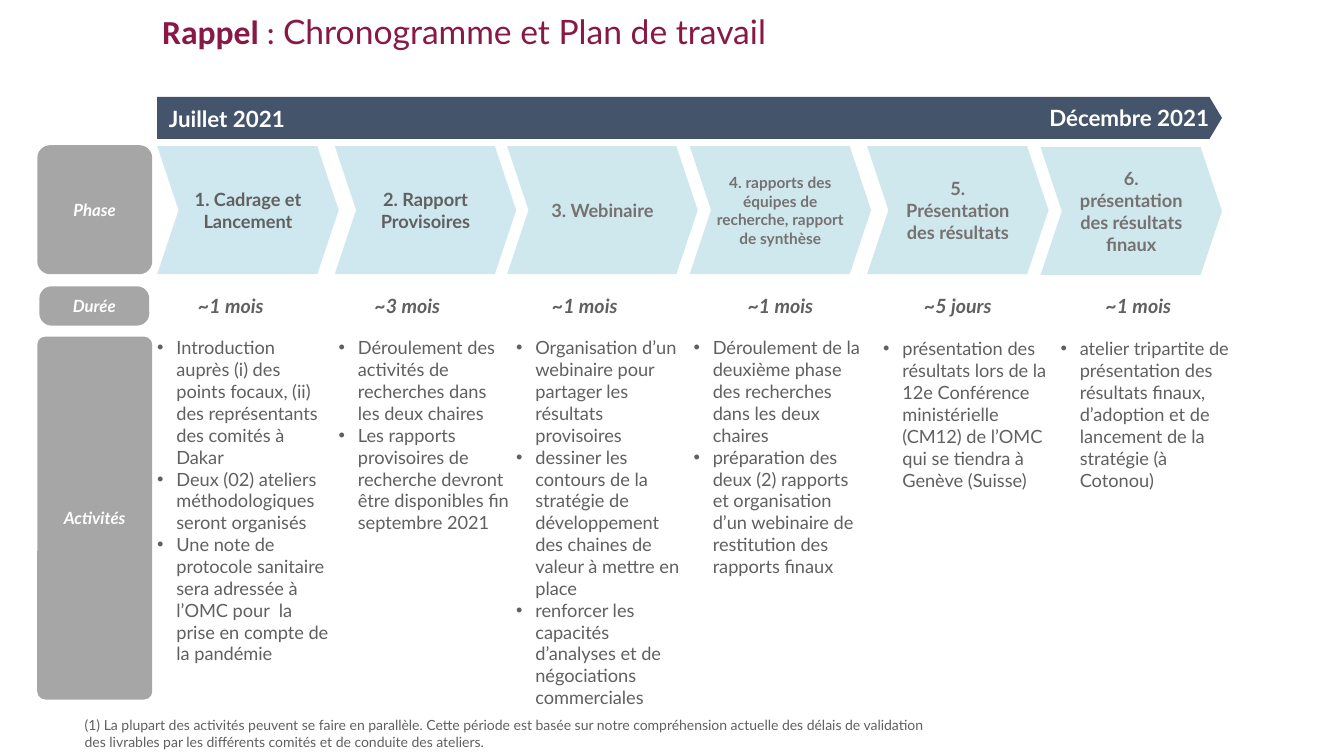
from lxml import etree
from pptx import Presentation
from pptx.dml.color import RGBColor
from pptx.enum import shapes, text
from pptx.oxml.ns import qn
from pptx.util import Inches, Pt

PLUM, NAVY, TEAL, PALE_TEAL = "881946", "44546A", "118AAA", "CFE8EE"
GREY, DARK, WARM, WHITE = "A6A6A6", "606060", "767171", "FFFFFF"
SHAPE = shapes.MSO_SHAPE
CENTER = text.PP_ALIGN.CENTER
TOP, MIDDLE, BOTTOM = (text.MSO_ANCHOR.TOP, text.MSO_ANCHOR.MIDDLE,
                       text.MSO_ANCHOR.BOTTOM)
DEFAULT_INSETS = (0.1, 0.05, 0.1, 0.05)
NO_INSETS = (0, 0, 0, 0)


def color(value):
    return RGBColor.from_string(value)


class SlideBuilder:
    def __init__(self, slide, font="Lato"):
        self.slide = slide
        self.font = font

    def style_run(self, run, size, ink, bold=False, italic=False, font=None):
        run.font.name = font or self.font
        run.font.size = Pt(size)
        run.font.color.rgb = color(ink)
        run.font.bold = bold
        run.font.italic = italic

    def set_text(self, shape, lines, size, ink, bold=False, italic=False,
                 align=None, anchor=MIDDLE, insets=DEFAULT_INSETS, hang=0,
                 bullet=None):
        """Fill a shape with one paragraph per line; hang is the hanging indent."""
        frame = shape.text_frame
        frame.word_wrap = True
        frame.vertical_anchor = anchor
        (frame.margin_left, frame.margin_top,
         frame.margin_right, frame.margin_bottom) = map(Inches, insets)
        frame.text = "\n".join(lines)
        for paragraph in frame.paragraphs:
            properties = paragraph._p.get_or_add_pPr()
            if hang:
                properties.set("marL", str(Inches(hang)))
                properties.set("indent", str(-Inches(hang)))
            if bullet:
                etree.SubElement(properties, qn("a:buFont")).set("typeface", "Arial")
                etree.SubElement(properties, qn("a:buChar")).set("char", bullet)
            paragraph.alignment = align
            for run in paragraph.runs:
                self.style_run(run, size, ink, bold, italic)

    def text_box(self, box, lines, size, ink, **style):
        shape = self.slide.shapes.add_textbox(*map(Inches, box))
        self.set_text(shape, lines, size, ink, **style)
        return shape

    def block(self, kind, box, adjustments, fill, alpha=None):
        shape = self.slide.shapes.add_shape(kind, *map(Inches, box))
        for index, value in enumerate(adjustments):
            shape.adjustments[index] = value
        shape.shadow.inherit = False
        shape.fill.solid()
        shape.fill.fore_color.rgb = color(fill)
        shape.line.fill.background()
        if alpha is not None:
            tint = shape._element.spPr.find(qn("a:solidFill")).find(qn("a:srgbClr"))
            etree.SubElement(tint, qn("a:alpha")).set("val", str(alpha * 1000))
        return shape

    def title(self, box, parts, size, ink):
        """Add a one-line title from (text, bold, font) parts."""
        shape = self.text_box(box, [""], size, ink)
        paragraph = shape.text_frame.paragraphs[0]
        paragraph.line_spacing = 0.9
        for words, bold, font in parts:
            run = paragraph.add_run()
            run.text = words
            self.style_run(run, size, ink, bold, font=font)

    def row_label(self, box, radius, label):
        shape = self.block(SHAPE.ROUNDED_RECTANGLE, box, [radius], GREY)
        self.set_text(shape, [label], 12, WHITE, bold=True, italic=True,
                      align=CENTER, insets=(0, 0.04, 0, 0.04))

    def phase(self, box, label, fill, alpha, size, ink, insets):
        shape = self.block(SHAPE.CHEVRON, box, [0.167], fill, alpha)
        self.set_text(shape, [label], size, ink, bold=True, align=CENTER,
                      insets=insets)

    def duration(self, left, label):
        self.text_box((left, 2.84, 1.8, 0.39), [label], 14, DARK, bold=True,
                      italic=True, align=CENTER, insets=(0.04,) * 4)

    def activities(self, left, top, items):
        self.text_box((left, top, 1.76, 2.8), items, 13, DARK, anchor=TOP,
                      insets=(0, 0, 0.04, 0.04), hang=0.19, bullet="•")


TINTED = (TEAL, 20, 13, DARK, DEFAULT_INSETS)
SOLID = (PALE_TEAL, None, 13, WARM, DEFAULT_INSETS)
SMALL = (PALE_TEAL, None, 11, WARM, (0.04, 0.05, 0.04, 0.05))

# Chevron box, label, look; duration left, label; activities left, top, items
PHASES = [
    ((1.56, 1.45, 1.8, 1.27), "1. Cadrage et Lancement", TINTED,
     1.39, "~1 mois", 1.56, 3.34,
     ["Introduction auprès (i) des points focaux, (ii) des représentants "
      "des comités à Dakar",
      "Deux (02) ateliers méthodologiques seront organisés",
      "Une note de protocole sanitaire sera adressée à l’OMC pour  la prise "
      "en compte de la pandémie"]),
    ((3.32, 1.45, 1.8, 1.27), "2. Rapport Provisoires", TINTED,
     3.14, "~3 mois", 3.36, 3.34,
     ["Déroulement des activités de recherches dans les deux chaires",
      "Les rapports provisoires de recherche devront être disponibles fin "
      "septembre 2021"]),
    ((5.03, 1.45, 1.89, 1.27), "3. Webinaire", SOLID,
     4.9, "~1 mois", 5.12, 3.34,
     ["Organisation d’un webinaire pour partager les résultats provisoires",
      "dessiner les contours de la stratégie de développement des chaines "
      "de valeur à mettre en place",
      "renforcer les capacités d’analyses et de négociations commerciales"]),
    ((6.84, 1.45, 1.8, 1.27),
     "4. rapports des équipes de recherche, rapport de synthèse", SMALL,
     6.84, "~1 mois", 6.88, 3.34,
     ["Déroulement de la deuxième phase des recherches dans les deux chaires",
      "préparation des deux (2) rapports et organisation d’un webinaire de "
      "restitution des rapports finaux"]),
    ((8.6, 1.45, 1.8, 1.27), "5. Présentation des résultats", SOLID,
     8.6, "~5 jours", 8.76, 3.35,
     ["présentation des résultats lors de la 12e Conférence ministérielle "
      "(CM12) de l’OMC qui se tiendra à Genève (Suisse)"]),
    ((10.32, 1.46, 1.8, 1.27), "6. présentation des résultats finaux", SOLID,
     10.39, "~1 mois", 10.52, 3.35,
     ["atelier tripartite de présentation des résultats finaux, d’adoption "
      "et de lancement de la stratégie (à Cotonou)"]),
]
ROW_LABELS = [
    ((0.37, 1.44, 1.14, 1.28), 0.112, "Phase"),
    ((0.39, 2.84, 1.09, 0.39), 0.312, "Durée"),
    ((0.37, 3.34, 1.14, 3.6), 0.07, "Activités"),
]
DATES = [((1.37, 0.96, 1.76, 0.44), "Juillet 2021"),
         ((10.32, 0.95, 1.76, 0.44), "Décembre 2021")]


def main():
    presentation = Presentation()
    presentation.slide_width = Inches(13.33)
    presentation.slide_height = Inches(7.5)
    slide = presentation.slides.add_slide(presentation.slide_layouts[6])
    builder = SlideBuilder(slide)

    builder.title((1.51, 0.1, 9.44, 0.46),
                  [("Rappel", True, "Calibri"), (" : ", False, "Calibri"),
                   ("Chronogramme et Plan de travail", False, "Lato")],
                  24, PLUM)
    builder.block(SHAPE.RIGHT_ARROW, (1.56, 0.96, 10.56, 0.42),
                  [0.989, 0.297], NAVY)
    for box, date in DATES:
        builder.text_box(box, [date], 16, WHITE, bold=True, align=CENTER,
                         insets=NO_INSETS, hang=0.25)
    for box, radius, label in ROW_LABELS:
        builder.row_label(box, radius, label)
    for (box, label, look, duration_left, duration,
         items_left, items_top, items) in PHASES:
        builder.phase(box, label, *look)
        builder.duration(duration_left, duration)
        builder.activities(items_left, items_top, items)
    builder.text_box(
        (0.84, 7.1, 8.43, 0.34),
        ["(1) La plupart des activités peuvent se faire en parallèle. Cette "
         "période est basée sur notre compréhension actuelle des délais de "
         "validation des livrables par les différents comités et de conduite "
         "des ateliers."],
        10, DARK, anchor=BOTTOM, insets=NO_INSETS)

    presentation.save("out.pptx")


if __name__ == "__main__":
    main()
